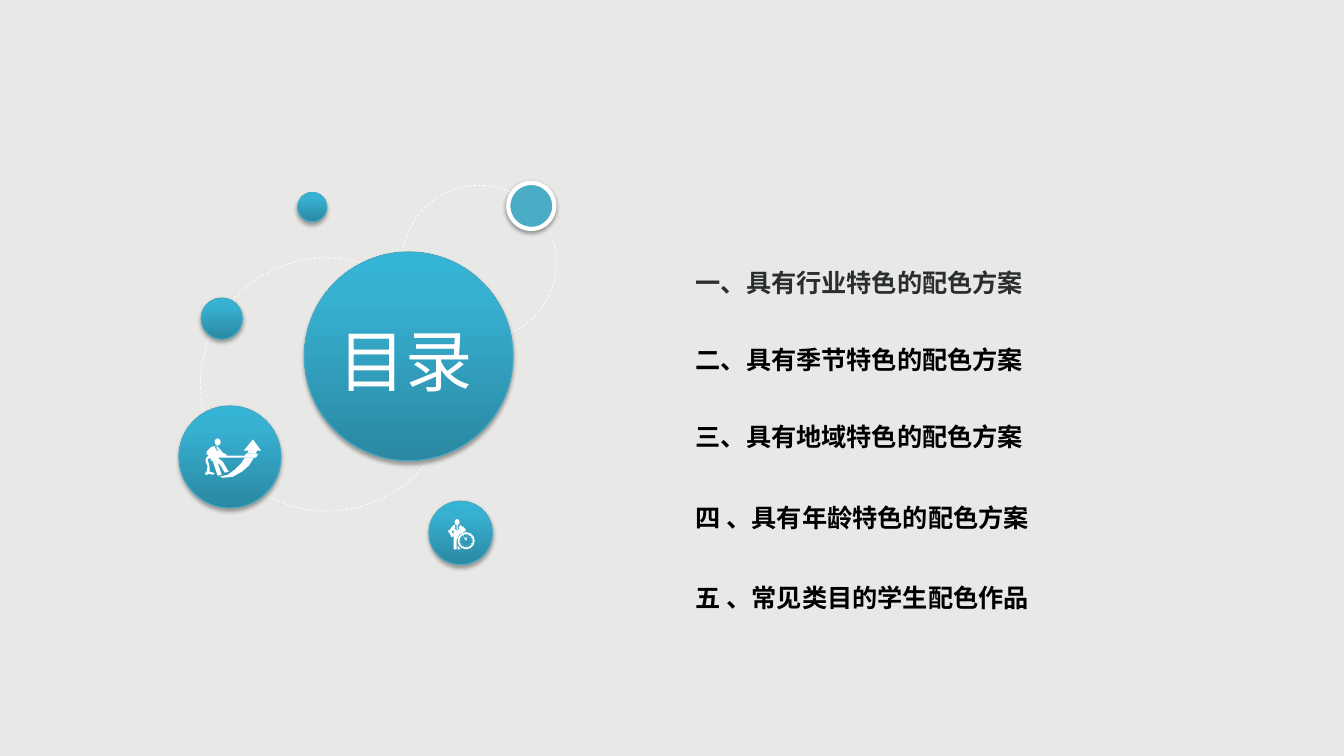
from copy import deepcopy
from math import cos, pi, sin

from lxml.etree import SubElement
from pptx import Presentation
from pptx.dml.color import RGBColor
from pptx.enum.dml import MSO_LINE_DASH_STYLE as Dash
from pptx.enum.shapes import MSO_SHAPE as Shape
from pptx.enum.text import MSO_ANCHOR as Anchor, MSO_AUTO_SIZE as Fit, PP_ALIGN as Align
from pptx.oxml.ns import qn
from pptx.util import Cm, Pt

PAPER = RGBColor(0xE8, 0xE8, 0xE6)
WHITE = RGBColor(0xFF, 0xFF, 0xFF)
BLACK = RGBColor(0x00, 0x00, 0x00)
SLATE = RGBColor(0x2B, 0x2E, 0x30)
TEAL = RGBColor(0x4B, 0xAC, 0xC6)
EDGE = RGBColor(0x46, 0xAA, 0xC5)
FADE = [
    (0, RGBColor(0x2A, 0x88, 0xA2)),
    (0.8, RGBColor(0x37, 0xB1, 0xD2)),
    (1, RGBColor(0x34, 0xB4, 0xD6)),
]
FONT = "Noto Sans CJK SC"

TITLE = "目录"
ITEMS = [
    ("一、具有行业特色的配色方案", SLATE, 0),
    ("二、具有季节特色的配色方案", BLACK, 33.5),
    ("三、具有地域特色的配色方案", BLACK, 33.5),
    ("四 、具有年龄特色的配色方案", BLACK, 36),
    ("五 、常见类目的学生配色作品", BLACK, 36),
]

ORBITS = [(10.13, 4.67, 3.89), (5.05, 6.5, 6.38)]
BALLS = [
    (7.67, 6.35, 5.26),
    (10.81, 12.63, 1.6),
    (5.07, 7.51, 1.04),
    (7.5, 4.85, 0.74),
    (4.51, 10.23, 2.57),
]
RING = (12.81, 4.61, 1.16)

UNIT = Cm(0.0254)
SWOOSH = [(243, 454), (239, 460), (233, 466), (226, 471), (218, 473), (221, 474),
          (231, 473), (240, 468), (247, 462), (252, 454)]
ARROW = [(245, 450), (254, 450), (255, 447), (259, 447), (251, 436), (242, 447), (247, 447)]
PULLER = [
    (255, 450), (244, 450), (243, 452), (225, 452), (225, 451), (221, 449), (217, 444),
    (216, 444), (217, 446), (216, 449), (216, 442), (215, 442), (215, 449), (214, 445),
    (213, 444), (214, 443), (211, 443), (209, 444), (207, 446), (205, 448), (205, 451),
    (206, 451), (207, 452), (204, 455), (204, 458), (206, 463), (205, 468), (203, 470),
    (204, 471), (206, 471), (207, 470), (211, 471), (213, 470), (212, 469), (208, 468),
    (208, 463), (207, 459), (206, 456), (209, 454), (209, 457), (211, 457), (216, 472),
    (220, 471), (216, 459), (219, 462), (223, 469), (227, 468), (221, 458), (217, 455),
    (217, 454), (254, 454), (256, 451),
]
COAT = [
    (462, 527), (462, 525), (461, 524), (460, 523), (458, 522), (457, 521), (456, 521),
    (457, 522), (455, 523), (456, 524), (454, 527), (454, 521), (453, 521), (453, 527),
    (451, 524), (452, 523), (451, 522), (452, 521), (450, 521), (449, 522), (446, 526),
    (445, 526), (445, 528), (446, 529), (448, 533), (450, 532), (450, 545), (453, 545),
    (453, 536), (456, 530),
]
ARM = [(457, 526), (458, 526), (456, 527), (455, 527)]
ELBOW = [(450, 530), (449, 529), (448, 527), (450, 526)]
LEG = [(454, 541), (454, 545), (457, 545)]
HANDS = [(463, 536), (463, 533), (462, 533), (462, 535), (460, 532), (460, 533), (462, 536)]
HEADS = {"puller": (213, 435, 6, 7), "clock": (451, 515, 5, 6)}
DIAL = (454, 528, 17)
TICK = 6


def oval(shapes, left, top, wide, high, kind=Shape.OVAL):
    disc = shapes.add_shape(kind, left, top, wide, high)
    disc.shadow.inherit = False
    return disc


def shade(disc, alpha, dist):
    glow = disc._element.spPr.find(qn("a:effectLst"))
    cast = SubElement(glow, qn("a:outerShdw"), blurRad=str(Pt(3.1)), dist=str(Pt(dist)),
                      dir="5400000", rotWithShape="0")
    tone = SubElement(cast, qn("a:srgbClr"), val=str(BLACK))
    SubElement(tone, qn("a:alpha"), val=str(alpha * 1000))


def edge(disc, color, width):
    disc.line.color.rgb = color
    disc.line.width = Pt(width)


def blank(mark):
    mark.fill.solid()
    mark.fill.fore_color.rgb = WHITE
    mark.line.fill.background()


def dot(group, left, top, wide, high, kind=Shape.OVAL):
    mark = oval(group.shapes, *[int(UNIT * n) for n in (left, top, wide, high)], kind)
    blank(mark)
    return mark


def draw(group, first, *holes):
    pen = group.shapes.build_freeform(*first[0], scale=UNIT)
    pen.add_line_segments(first[1:])
    for hole in holes:
        pen.move_to(*hole[0])
        pen.add_line_segments(hole[1:])
    mark = pen.convert_to_shape()
    mark.shadow.inherit = False
    blank(mark)


def style(para, size, color, bold):
    for run in para.runs:
        run.font.size = Pt(size)
        run.font.bold = bold
        run.font.color.rgb = color
        run.font.name = FONT
        SubElement(run.font._element, qn("a:ea"), typeface=FONT)


def place(box, left, top, wide, high):
    box.left, box.top, box.width, box.height = Cm(left), Cm(top), Cm(wide), Cm(high)
    frame = box.text_frame
    frame.margin_left = frame.margin_right = frame.margin_top = frame.margin_bottom = 0
    frame.vertical_anchor = Anchor.TOP
    frame.word_wrap = True
    frame.auto_size = Fit.NONE
    return frame


def main():
    deck = Presentation()
    deck.slide_width, deck.slide_height = Cm(33.87), Cm(19.05)
    slide = deck.slides.add_slide(deck.slide_layouts[1])
    slide.background.fill.solid()
    slide.background.fill.fore_color.rgb = PAPER
    shapes = slide.shapes
    title, body = slide.placeholders

    for left, top, size in ORBITS:
        orbit = oval(shapes, Cm(left), Cm(top), Cm(size), Cm(size))
        orbit.fill.background()
        edge(orbit, WHITE, 0.5)
        orbit.line.dash_style = Dash.DASH

    for left, top, size in BALLS:
        ball = oval(shapes, Cm(left), Cm(top), Cm(size), Cm(size))
        ball.fill.gradient()
        ball.fill.gradient_angle = 90
        stops = ball._element.spPr.find(".//" + qn("a:gsLst"))
        stops.insert(1, deepcopy(stops[0]))
        for stop, (spot, color) in zip(ball.fill.gradient_stops, FADE):
            stop.position = spot
            stop.color.rgb = color
        edge(ball, EDGE, 0.75)
        shade(ball, 35, 1.8)

    left, top, size = RING
    ring = oval(shapes, Cm(left), Cm(top), Cm(size), Cm(size))
    ring.fill.solid()
    ring.fill.fore_color.rgb = TEAL
    edge(ring, WHITE, 3)
    shade(ring, 38, 1.6)

    puller = shapes.add_group_shape()
    dot(puller, *HEADS["puller"])
    for part in (SWOOSH, ARROW, PULLER):
        draw(puller, part)

    clock = shapes.add_group_shape()
    dot(clock, *HEADS["clock"])
    draw(clock, COAT, ARM, ELBOW)
    draw(clock, LEG)
    draw(clock, HANDS)
    left, top, size = DIAL
    dial = dot(clock, left, top, size, size, Shape.DONUT)
    dial.adjustments[0] = 0.1
    for hour in range(12):
        turn = hour * pi / 6
        dot(clock, left + size / 2 + TICK * cos(turn) - 0.5,
            top + size / 2 + TICK * sin(turn) - 0.5, 1, 1)

    frame = place(title, 8.03, 8.04, 4.37, 2.5)
    frame.text = TITLE
    frame.paragraphs[0].alignment = Align.CENTER
    style(frame.paragraphs[0], 48, WHITE, False)

    frame = place(body, 17.53, 6.73, 9.7, 9.2)
    frame.text = "\n".join(text for text, color, gap in ITEMS)
    for para, (text, color, gap) in zip(frame.paragraphs, ITEMS):
        para.space_before = Pt(gap)
        props = para._p.get_or_add_pPr()
        props.set("marL", "0")
        props.set("indent", "0")
        SubElement(props, qn("a:buNone"))
        style(para, 18, color, True)

    for box in (title, body):
        shapes._spTree.append(box._element)
    deck.save("out.pptx")


if __name__ == "__main__":
    main()
